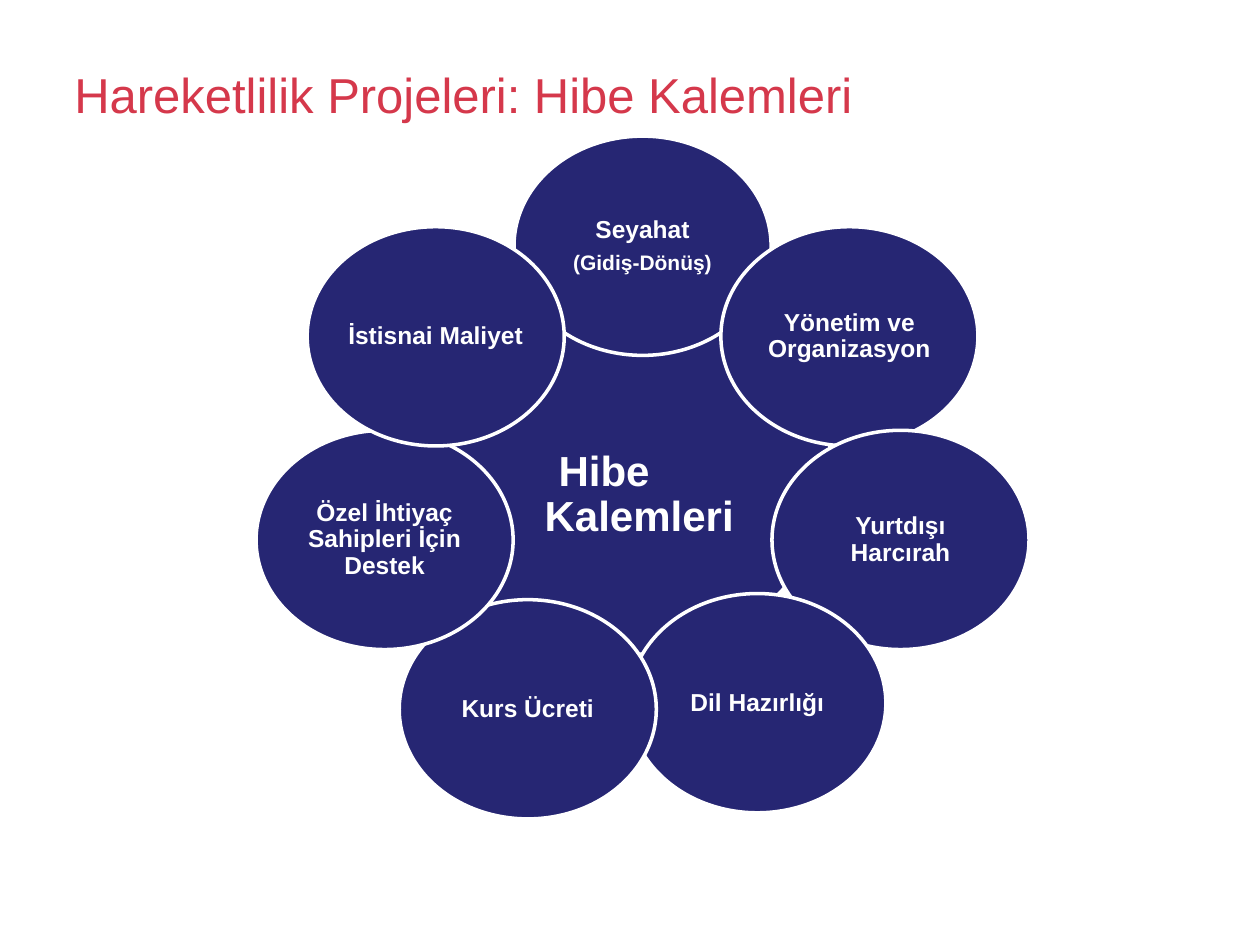
import math

from pptx import Presentation
from pptx.dml.color import RGBColor
from pptx.enum import shapes, text
from pptx.util import Pt

NAVY, WHITE, RED = "262673", "FFFFFF", "D5384B"
# Each petal: lines of (wording, size), then a downward nudge
PETALS = [
    ([("Seyahat", 14), ("(Gidiş-Dönüş)", 12)], 0),
    ([("Yönetim ve Organizasyon", 14)], 0),
    ([("Yurtdışı Harcırah", 14)], 0),
    ([("Dil Hazırlığı", 14)], 0),
    ([("Kurs Ücreti", 14)], 3.5),
    ([("Özel İhtiyaç Sahipleri İçin Destek", 14)], 0),
    ([("İstisnai Maliyet", 14)], 0),
]


def color(value):
    return RGBColor.from_string(value)


def set_all(target, **values):
    for name, value in values.items():
        setattr(target, name, value)


def write(frame, lines, font_color, margin=0, bold=True, **paragraph_format):
    """Fill a text frame with one paragraph per (wording, size) line."""
    set_all(frame, word_wrap=True, vertical_anchor=text.MSO_ANCHOR.MIDDLE,
            margin_left=Pt(margin), margin_right=Pt(margin),
            margin_top=Pt(margin), margin_bottom=Pt(margin))
    for index, (wording, size) in enumerate(lines):
        paragraph = frame.paragraphs[0] if index == 0 else frame.add_paragraph()
        set_all(paragraph, **paragraph_format)
        run = paragraph.add_run()
        run.text = wording
        set_all(run.font, name="Arial", size=Pt(size), bold=bold)
        run.font.color.rgb = color(font_color)


def add_title(slide, left, top, width, height):
    title = slide.shapes.title
    set_all(title, left=Pt(left), top=Pt(top), width=Pt(width), height=Pt(height))
    write(title.text_frame, [("Hareketlilik Projeleri: Hibe Kalemleri", 28)], RED,
          margin=7.2, bold=False, alignment=text.PP_ALIGN.LEFT)


def add_ellipse(slide, center_x, center_y, width, height):
    ellipse = slide.shapes.add_shape(
        shapes.MSO_SHAPE.OVAL, Pt(center_x - width / 2), Pt(center_y - height / 2),
        Pt(width), Pt(height))
    ellipse.shadow.inherit = False
    ellipse.fill.solid()
    ellipse.fill.fore_color.rgb = color(NAVY)
    ellipse.line.color.rgb = color(WHITE)
    ellipse.line.width = Pt(2)
    return ellipse


def add_hub_label(slide, left, top, width, height):
    label = slide.shapes.add_textbox(Pt(left), Pt(top), Pt(width), Pt(height))
    write(label.text_frame, [("Hibe Kalemleri", 24)], WHITE, margin=3,
          alignment=text.PP_ALIGN.LEFT, line_spacing=0.9, space_after=Pt(8.4))
    properties = label.text_frame.paragraphs[0]._p.get_or_add_pPr()
    properties.set("marL", str(Pt(7)))
    properties.set("indent", str(Pt(8)))


def add_flower(slide, left, top, width, height):
    """Place a hub and a ring of overlapping petals inside the box."""
    petal_width, petal_height = 146.9, 125.3
    radius_x, radius_y = 151.2, 137.5
    center_x = left + width / 2
    center_y = top + petal_height / 2 + radius_y
    add_ellipse(slide, center_x - 8, center_y - 9.5, 231.8, 211)
    for index, (lines, nudge) in enumerate(PETALS):
        angle = 2 * math.pi * index / len(PETALS)
        petal = add_ellipse(slide, center_x + radius_x * math.sin(angle),
                            center_y - radius_y * math.cos(angle) + nudge,
                            petal_width, petal_height)
        write(petal.text_frame, lines, WHITE, margin=1.4,
              alignment=text.PP_ALIGN.CENTER, line_spacing=0.9, space_after=Pt(4.9))
    add_hub_label(slide, center_x - 66, center_y - 42, 132, 94)


def main():
    presentation = Presentation()
    set_all(presentation, slide_width=Pt(720), slide_height=Pt(540))
    slide = presentation.slides.add_slide(presentation.slide_layouts[5])
    add_title(slide, 35.3, 29.5, 661, 48.2)
    add_flower(slide, 146.2, 77.8, 442, 390)
    presentation.save("out.pptx")


if __name__ == "__main__":
    main()
